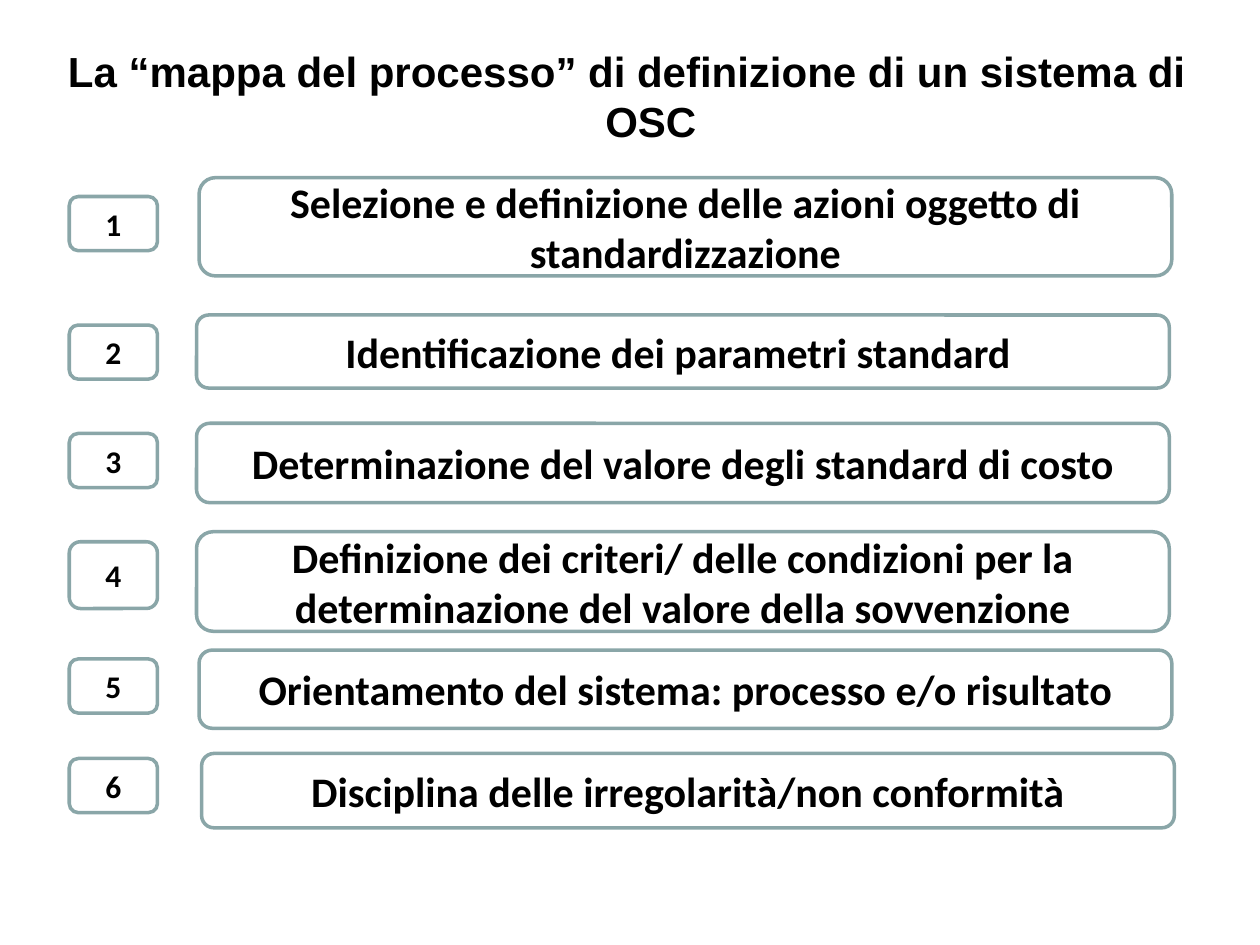
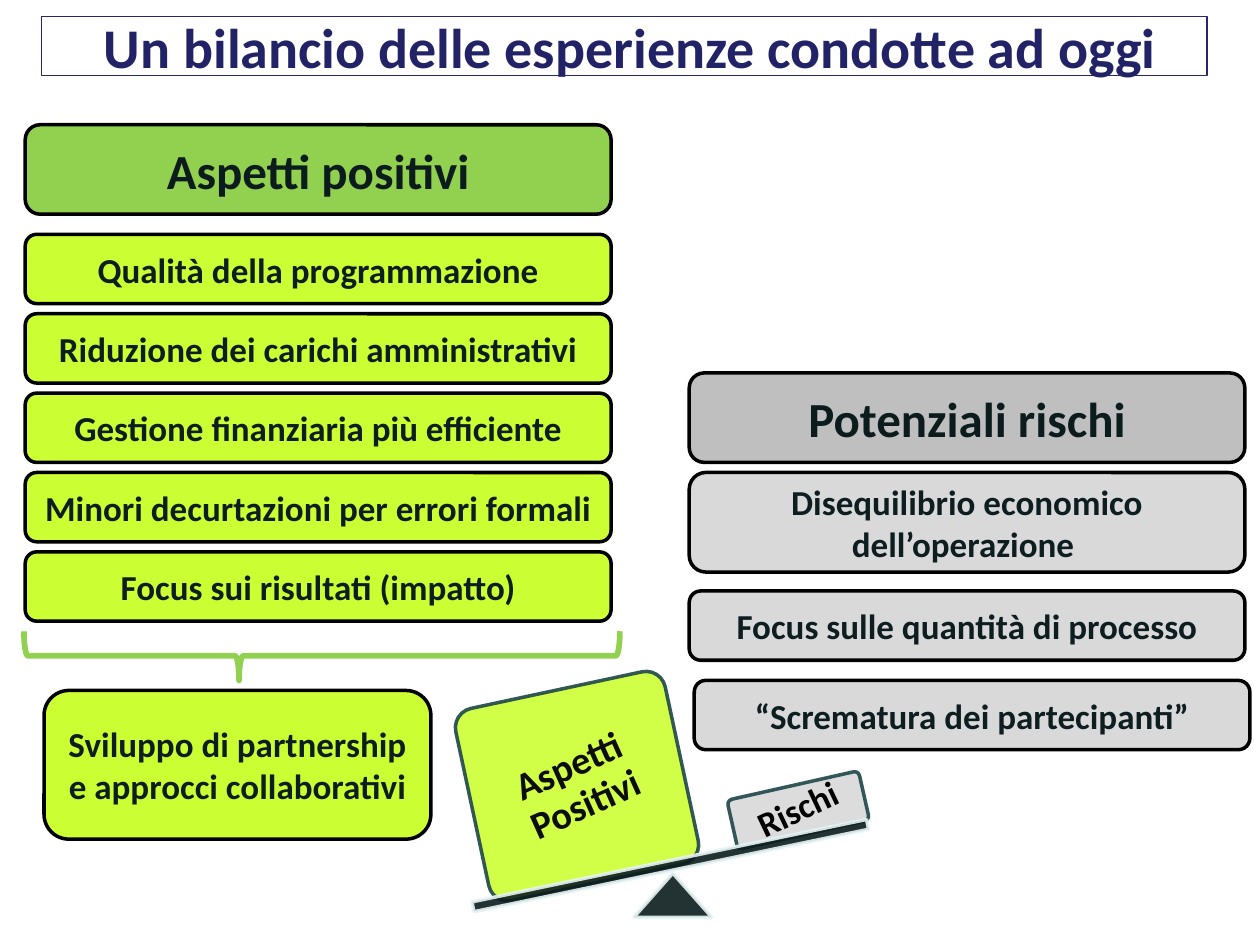
from lxml import etree
from pptx import Presentation
from pptx.dml.color import RGBColor
from pptx.enum.shapes import MSO_SHAPE as Preset
from pptx.enum.text import MSO_ANCHOR as Anchor, PP_ALIGN as Align
from pptx.oxml.ns import qn
from pptx.util import Inches, Pt

BLACK = RGBColor(0x00, 0x00, 0x00)
WHITE = RGBColor(0xFF, 0xFF, 0xFF)
TEAL_GREY = RGBColor(0x8A, 0xA6, 0xA8)
NAVY = RGBColor(0x22, 0x22, 0x67)
NAVY_LINE = RGBColor(0x26, 0x26, 0x73)
INK = RGBColor(0x0E, 0x1E, 0x20)
DARK_INK = RGBColor(0x0C, 0x1C, 0x1D)
SOFT_BLACK = RGBColor(0x0D, 0x0D, 0x0D)
GREEN = RGBColor(0x92, 0xD0, 0x50)
LIME = RGBColor(0xCC, 0xFF, 0x33)
GREY = RGBColor(0xBF, 0xBF, 0xBF)
LIGHT_GREY = RGBColor(0xD9, 0xD9, 0xD9)
DARK_TEAL = RGBColor(0x1E, 0x46, 0x49)
PALE_TEAL = RGBColor(0xE7, 0xF3, 0xF4)

# Looks: fill, line, font colour, font size
STEP = dict(fill=WHITE, line=TEAL_GREY, color=BLACK, size=24)
NUMBER = dict(STEP, size=18)
BENEFIT = dict(fill=LIME, line=BLACK, color=INK, size=20)
RISK = dict(BENEFIT, fill=LIGHT_GREY)
BENEFIT_HEAD = dict(fill=GREEN, line=BLACK, color=DARK_INK, size=28)
RISK_HEAD = dict(BENEFIT_HEAD, fill=GREY)

# Text, left, top, height, number top, number height
STEPS = [
    ("Selezione e definizione delle azioni oggetto di standardizzazione", 1.58, 1.41, 0.78, 1.56, 0.43),
    ("Identificazione dei parametri standard ", 1.56, 2.5, 0.58, 2.58, 0.43),
    ("Determinazione del valore degli standard di costo", 1.56, 3.36, 0.63, 3.44, 0.43),
    ("Definizione dei criteri/ delle condizioni per la determinazione del valore della sovvenzione",
     1.56, 4.22, 0.79, 4.3, 0.53),
    ("Orientamento del sistema: processo e/o risultato", 1.58, 5.16, 0.62, 5.23, 0.43),
    ("Disciplina delle irregolarità/non conformità", 1.6, 5.98, 0.59, 6.02, 0.43),
]
BENEFITS = [
    "Qualità della programmazione",
    "Riduzione dei carichi amministrativi",
    "Gestione finanziaria più efficiente",
    "Minori decurtazioni per errori formali",
    "Focus sui risultati (impatto)",
]
RISKS = [
    ("Disequilibrio economico dell’operazione ", 5.47, 3.75, 0.79),
    ("Focus sulle quantità di processo", 5.47, 4.69, 0.55),
    ("“Scrematura dei partecipanti”", 5.51, 5.4, 0.55),
]


def set_attributes(target, values):
    for name, value in values.items():
        setattr(target, name, value)


def write(shape, text, size, color, font="Calibri", anchor=Anchor.MIDDLE):
    set_attributes(shape.text_frame, dict(word_wrap=True, vertical_anchor=anchor))
    paragraph = shape.text_frame.paragraphs[0]
    paragraph.alignment = Align.CENTER
    run = paragraph.add_run()
    run.text = text
    set_attributes(run.font, dict(name=font, size=Pt(size), bold=True))
    run.font.color.rgb = color
    return paragraph


def add_outline(shapes, preset, area, fill, line, width=2, rotation=0):
    """Add a shape without text; a fill of None leaves it hollow."""
    shape = shapes.add_shape(preset, *map(Inches, area))
    shape.shadow.inherit = False
    shape.rotation = rotation
    if fill is None:
        shape.fill.background()
    else:
        shape.fill.solid()
        shape.fill.fore_color.rgb = fill
    shape.line.color.rgb = line
    shape.line.width = Pt(width)
    return shape


def add_box(slide, text, area, fill, line, color, size):
    box = add_outline(slide.shapes, Preset.ROUNDED_RECTANGLE, area, fill, line)
    write(box, text, size, color)


def add_title(slide, text, area, line, **text_format):
    title = add_outline(slide.shapes, Preset.RECTANGLE, area, WHITE, line, 0.75)
    return write(title, text, **text_format)


def add_translucent(shapes, preset, area, fill, line, rotation=0):
    shape = add_outline(shapes, preset, area, fill, line, rotation=rotation)
    for color in shape._element.spPr.iter(qn("a:srgbClr")):
        etree.SubElement(color, qn("a:alpha"), val="90000")
    return shape


def add_weight(shapes, text, area, fill, color, size, inset, tilt):
    """Add a block on the scale; its label leans twice as far as the block."""
    block = add_translucent(shapes, Preset.ROUNDED_RECTANGLE, area, fill, DARK_TEAL, 360 - tilt)
    block.adjustments[0] = 0.1
    label = shapes.add_textbox(*map(Inches, area))
    label.rotation = 360 - 2 * tilt
    sides = ("left", "top", "right", "bottom")
    set_attributes(label.text_frame, {f"margin_{side}": Inches(inset) for side in sides})
    write(label, text, size, color).line_spacing = 0.9


def add_scale(slide):
    parts = slide.shapes.add_group_shape().shapes
    add_weight(parts, "Aspetti Positivi", (3.73, 5.46, 1.7, 1.56), LIME, SOFT_BLACK, 22, 0.09, 12.1)
    add_weight(parts, "Rischi", (5.8, 6.23, 1.07, 0.4), LIGHT_GREY, BLACK, 20, 0.08, 12.7)
    add_translucent(parts, Preset.ISOSCELES_TRIANGLE, (5.03, 6.93, 0.62, 0.35), DARK_INK, PALE_TEAL)
    add_translucent(parts, Preset.RECTANGLE, (3.72, 6.83, 3.2, 0.08), DARK_INK, PALE_TEAL, 348.2)


def build_process_map(slide):
    title = add_title(slide, "La “mappa del processo” di definizione di un sistema di OSC",
                      (0.35, 0.31, 9.25, 1.14), WHITE,
                      size=24, color=BLACK, font="Arial", anchor=Anchor.TOP)
    hanging = Inches(0.38)
    properties = title._p.get_or_add_pPr()
    properties.set("marL", str(hanging))
    properties.set("indent", str(-hanging))
    for number, (text, left, top, height, number_top, number_height) in enumerate(STEPS, 1):
        add_box(slide, text, (left, top, 7.72, height), **STEP)
        add_box(slide, str(number), (0.55, number_top, 0.7, number_height), **NUMBER)


def build_balance(slide):
    add_title(slide, " Un bilancio delle esperienze condotte ad oggi",
              (0.33, 0.13, 9.25, 0.47), NAVY_LINE, size=32, color=NAVY)
    add_scale(slide)

    add_box(slide, "Aspetti positivi", (0.2, 0.99, 4.65, 0.71), **BENEFIT_HEAD)
    for row, text in enumerate(BENEFITS):
        add_box(slide, text, (0.2, 1.86 + 0.63 * row, 4.65, 0.55), **BENEFIT)
    brace = add_outline(slide.shapes, Preset.LEFT_BRACE, (2.36, 2.84, 0.39, 4.73),
                        None, GREEN, 3.25, 270)
    brace.adjustments[0] = 0.083
    brace.adjustments[1] = 0.361
    add_box(slide, "Sviluppo di partnership e approcci collaborativi",
            (0.35, 5.48, 3.07, 1.18), **BENEFIT)

    add_box(slide, "Potenziali rischi", (5.47, 2.96, 4.41, 0.71), **RISK_HEAD)
    for text, left, top, height in RISKS:
        add_box(slide, text, (left, top, 4.41, height), **RISK)


def main():
    deck = Presentation()
    set_attributes(deck, dict(slide_width=Inches(10), slide_height=Inches(7.5)))
    blank = deck.slide_layouts[6]
    for build in (build_process_map, build_balance):
        build(deck.slides.add_slide(blank))
    deck.save("out.pptx")


if __name__ == "__main__":
    main()
